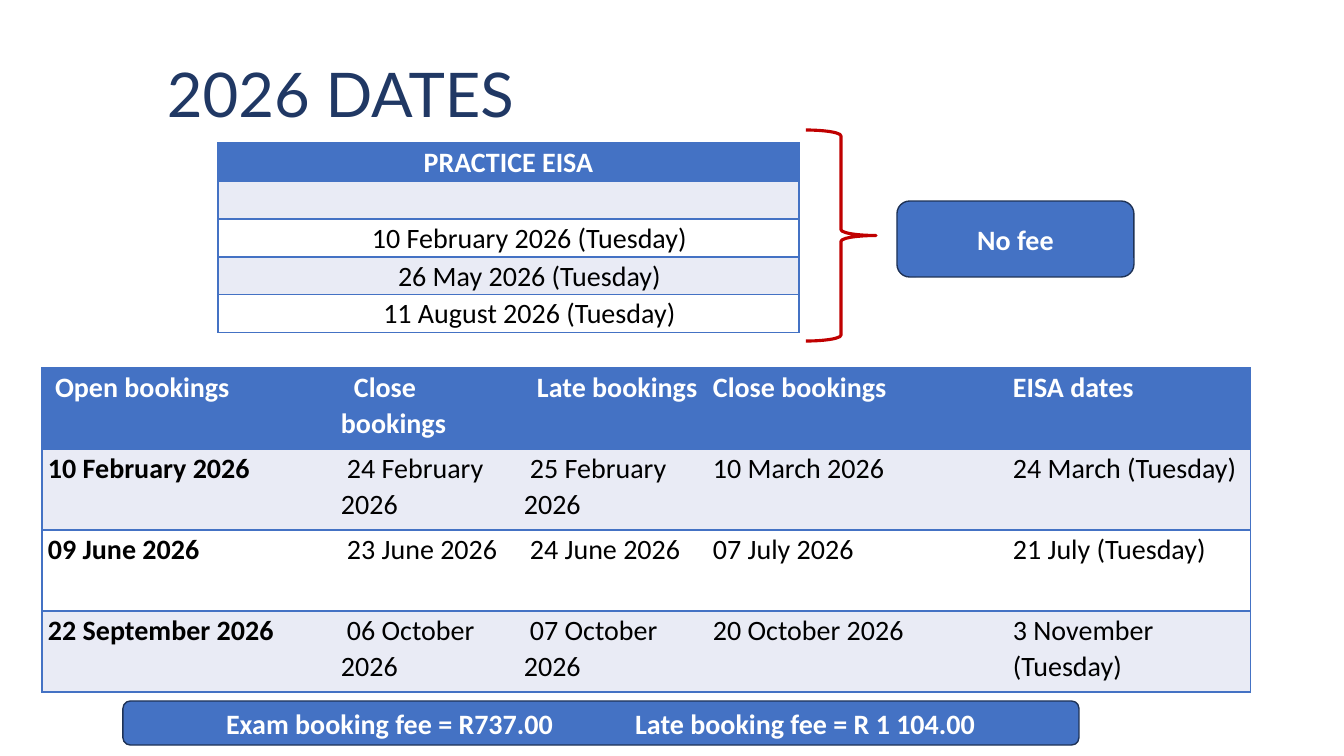
import pptx
import pptx.util
import pptx.dml.color
import pptx.enum.shapes
import pptx.enum.text
import lxml.etree

PX = 914400 / 100.8
HUES = {"blue": "4472C4", "pale": "E9EBF5", "white": "FFFFFF", "black": "000000",
        "navy": "203864", "edge": "1E3256", "red": "C00000"}
NS = "{http://schemas.openxmlformats.org/drawingml/2006/main}"
KIND = pptx.enum.shapes.MSO_SHAPE
ALIGN = pptx.enum.text.PP_ALIGN
MIDDLE = pptx.enum.text.MSO_ANCHOR.MIDDLE

PRACTICE = ["PRACTICE EISA", "", "10 February 2026 (Tuesday)",
            "26 May 2026 (Tuesday)", "11 August 2026 (Tuesday)"]
BOOKINGS = [
    ["Open bookings", "Close bookings", "Late bookings", "Close bookings", "EISA dates"],
    ["10 February 2026", "24 February 2026", "25 February 2026", "10 March 2026",
     "24 March (Tuesday)"],
    ["09 June 2026", "23 June 2026", "24 June 2026", "07 July 2026", "21 July (Tuesday)"],
    ["22 September 2026", "06 October 2026", "07 October 2026", "20 October 2026",
     "3 November (Tuesday)"],
]


def px(n):
    return pptx.util.Emu(round(n * PX))


def rgb(hue):
    return pptx.dml.color.RGBColor.from_string(HUES[hue])


def style(para, hue, bold=False, size=20, face="Calibri", align=ALIGN.LEFT):
    para.alignment = align
    font = para.font
    font.name, font.size, font.bold = face, pptx.util.Pt(size), bold
    font.color.rgb = rgb(hue)


def border(cell, sides, shown):
    props = cell._tc.get_or_add_tcPr()
    for side in sides:
        line = lxml.etree.SubElement(props, f"{NS}ln{side}", w="12700")
        if side in shown:
            fill = lxml.etree.SubElement(line, NS + "solidFill")
            lxml.etree.SubElement(fill, NS + "srgbClr", val=HUES["blue"])
        else:
            lxml.etree.SubElement(line, NS + "noFill")


def grid(slide, left, top, widths, height, count):
    frame = slide.shapes.add_table(count, len(widths), px(left), px(top),
                                   px(sum(widths)), px(height * count))
    table = frame.table
    table.first_row = table.horz_banding = False
    for col, width in zip(table.columns, widths):
        col.width = px(width)
    for row in table.rows:
        row.height = px(height)
    return table


def fill_cell(cell, text, row, shown, side, bold, align=ALIGN.LEFT, **indent):
    border(cell, "LRTB", shown)
    cell.fill.solid()
    cell.fill.fore_color.rgb = rgb("blue" if row == 0 else "pale" if row % 2 else "white")
    cell.margin_left = cell.margin_right = px(side)
    cell.margin_top = cell.margin_bottom = 0
    cell.text = text
    para = cell.text_frame.paragraphs[0]
    para.line_spacing = 1.07
    for key, gap in indent.items():
        para._p.get_or_add_pPr().set(key, str(px(gap)))
    style(para, "black" if row else "white", bold, align=align)


def shape(slide, kind, box, line, width, fill=None):
    item = slide.shapes.add_shape(kind, *map(px, box))
    item.shadow.inherit = False
    item.line.color.rgb = rgb(line)
    item.line.width = pptx.util.Pt(width)
    if fill:
        item.fill.solid()
        item.fill.fore_color.rgb = rgb(fill)
    else:
        item.fill.background()
    return item


def label(slide, box, text, align=ALIGN.CENTER, inset=10, tab=None):
    frame = shape(slide, KIND.ROUNDED_RECTANGLE, box, "edge", 1, "blue").text_frame
    frame.vertical_anchor = MIDDLE
    frame.word_wrap = True
    frame.margin_left = px(inset)
    frame.text = text
    para = frame.paragraphs[0]
    if tab:
        stops = lxml.etree.SubElement(para._p.get_or_add_pPr(), NS + "tabLst")
        lxml.etree.SubElement(stops, NS + "tab", pos=str(px(tab)), algn="l")
    style(para, "white", True, align=align)


def title(slide, box, text):
    frame = slide.shapes.add_textbox(*map(px, box)).text_frame
    frame.word_wrap = True
    frame.vertical_anchor = MIDDLE
    frame.text = text
    para = frame.paragraphs[0]
    para.line_spacing = 0.9
    style(para, "navy", size=44, face="Lato")


def main():
    deck = pptx.Presentation()
    deck.slide_width, deck.slide_height = px(1344), px(756)
    slide = deck.slides.add_slide(deck.slide_layouts[6])
    title(slide, (157, 55, 1095, 86), "2026 DATES")

    # Practice dates
    table = grid(slide, 218, 143, [581], 38, len(PRACTICE))
    for row, text in enumerate(PRACTICE):
        fill_cell(table.cell(row, 0), text, row, "LRTB", 7, row == 0,
                  ALIGN.CENTER, marL=42 if row else 0)

    # Booking periods
    table = grid(slide, 42, 368, [299, 183, 183, 299, 245], 81, len(BOOKINGS))
    last = len(BOOKINGS[0]) - 1
    for row, texts in enumerate(BOOKINGS):
        for col, text in enumerate(texts):
            shown = "TB" + ("L" if col == 0 else "R" if col == last else "")
            wide = row == 0 and col < 3
            lead = 0 if col == last else 13 if wide else 6
            fill_cell(table.cell(row, col), text, row, shown, 7 if col == last else 0,
                      row == 0 or col == 0, indent=lead)

    # Fees
    shape(slide, KIND.RIGHT_BRACE, (806, 130, 70, 211), "red", 2.25)
    label(slide, (897, 201, 237, 76), "No fee")
    label(slide, (123, 701, 956, 44),
          "Exam booking fee = R737.00\tLate booking fee = R 1 104.00",
          ALIGN.LEFT, 101, 409)
    deck.save("out.pptx")


if __name__ == "__main__":
    main()
